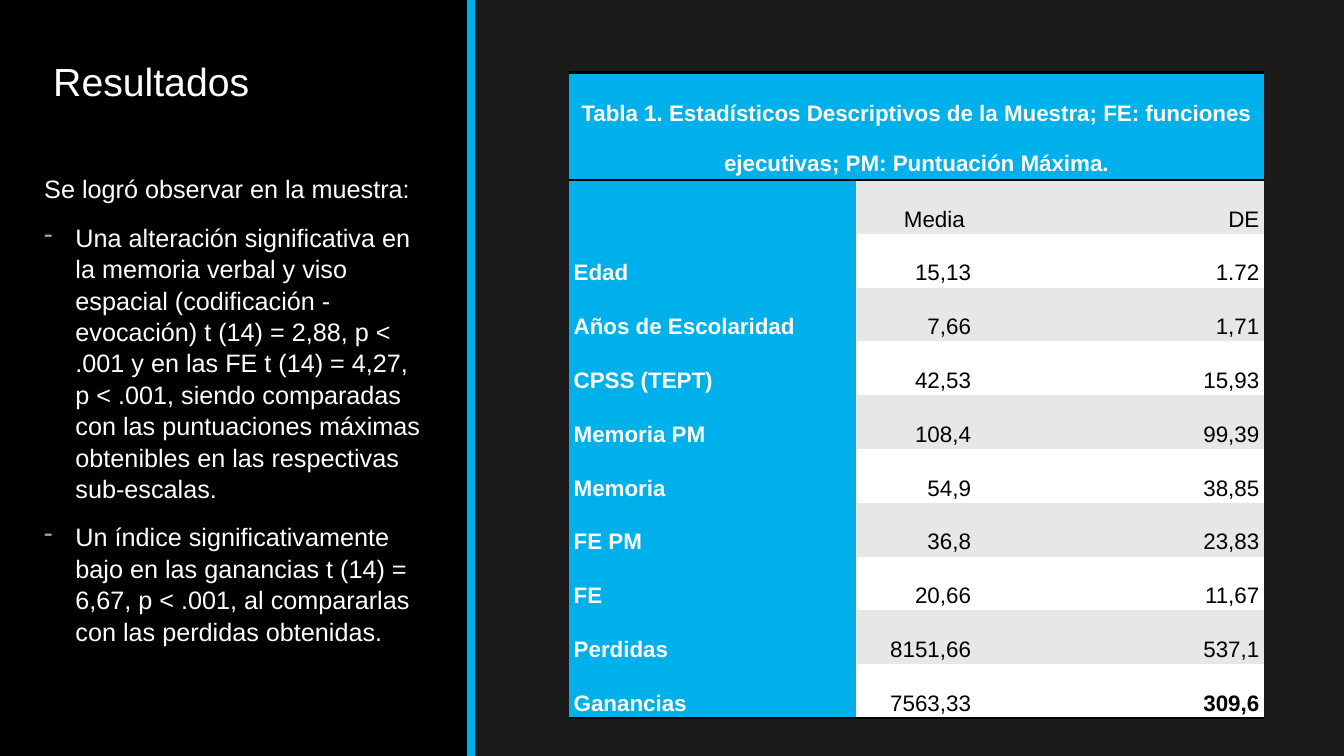
from dataclasses import dataclass

from lxml import etree
from pptx import Presentation
from pptx.dml.color import RGBColor
from pptx.enum.shapes import MSO_CONNECTOR, MSO_SHAPE
from pptx.enum.text import MSO_ANCHOR, PP_ALIGN
from pptx.oxml.ns import qn
from pptx.util import Inches, Pt

RECTANGLE = MSO_SHAPE.RECTANGLE
STRAIGHT = MSO_CONNECTOR.STRAIGHT
TOP, MIDDLE, BOTTOM = MSO_ANCHOR.TOP, MSO_ANCHOR.MIDDLE, MSO_ANCHOR.BOTTOM
LEFT, CENTER, RIGHT = PP_ALIGN.LEFT, PP_ALIGN.CENTER, PP_ALIGN.RIGHT
PLAIN_TABLE_STYLE = "{2D5ABB26-0587-4C30-8999-92F81FD0307C}"


@dataclass(frozen=True)
class Theme:
    font: str = "Arial"
    background: str = "1B1B1B"
    black: str = "000000"
    white: str = "FFFFFF"
    accent: str = "00B0EA"
    band: str = "E7E7E7"
    bullet: str = "A6A6A6"
    title_size: int = 28
    body_size: int = 18
    table_size: int = 16
    divider_width: int = 6
    rule_width: int = 2


THEME = Theme()

INTRO = "Se logró observar en la muestra:"
FINDINGS = [
    "Una alteración significativa en la memoria verbal y viso espacial "
    "(codificación - evocación) t (14) = 2,88, p < .001 y en las FE t (14) = 4,27, "
    "p < .001, siendo comparadas con las puntuaciones máximas obtenibles en las "
    "respectivas sub-escalas.",
    "Un índice significativamente bajo en las ganancias t (14) = 6,67, p < .001, "
    "al compararlas con las perdidas obtenidas.",
]
CAPTION = (
    "Tabla 1. Estadísticos Descriptivos de la Muestra; FE: funciones ejecutivas; "
    "PM: Puntuación Máxima."
)
STATISTICS = [
    ("", "Media ", "DE"),
    ("Edad", "15,13", "1.72"),
    ("Años de Escolaridad", "7,66", "1,71"),
    ("CPSS (TEPT)", "42,53", "15,93"),
    ("Memoria PM", "108,4", "99,39"),
    ("Memoria", "54,9", "38,85"),
    ("FE PM", "36,8", "23,83"),
    ("FE", "20,66", "11,67"),
    ("Perdidas", "8151,66", "537,1"),
    ("Ganancias", "7563,33", "309,6"),
]
COLUMN_WIDTHS = [2.85, 1.19, 2.86]
CAPTION_HEIGHT = 0.79
ROW_HEIGHT = 0.49


def color(value):
    return RGBColor.from_string(value)


def style_font(paragraph, size, value, bold=False):
    font = paragraph.font
    font.name = THEME.font
    font.size = Pt(size)
    font.bold = bold
    font.color.rgb = color(value)


def add_text_frame(slide, left, top, width, height, anchor):
    box = slide.shapes.add_textbox(Inches(left), Inches(top), Inches(width), Inches(height))
    frame = box.text_frame
    frame.word_wrap = True
    frame.vertical_anchor = anchor
    return frame


def add_dash(paragraph):
    properties = paragraph._p.get_or_add_pPr()
    indent = Inches(0.31)
    properties.set("marL", str(indent))
    properties.set("indent", str(-indent))
    bullet_color = etree.SubElement(properties, qn("a:buClr"))
    etree.SubElement(bullet_color, qn("a:srgbClr"), val=THEME.bullet)
    etree.SubElement(properties, qn("a:buChar"), char="-")


def add_summary_panel(slide, left, top, width, height):
    panel = slide.shapes.add_shape(
        RECTANGLE, Inches(left), Inches(top), Inches(width), Inches(height)
    )
    panel.shadow.inherit = False
    panel.fill.solid()
    panel.fill.fore_color.rgb = color(THEME.black)
    panel.line.fill.background()

    edge = Inches(left + width)
    divider = slide.shapes.add_connector(STRAIGHT, edge, Inches(top), edge, Inches(top + height))
    divider.line.color.rgb = color(THEME.accent)
    divider.line.width = Pt(THEME.divider_width)
    etree.SubElement(divider.element.spPr, qn("a:effectLst"))

    title = add_text_frame(slide, left + 0.43, top + 0.57, width - 0.84, 1.75, TOP).paragraphs[0]
    title.text = "Resultados"
    title.line_spacing = 0.9
    style_font(title, THEME.title_size, THEME.white)

    body = add_text_frame(slide, left + 0.34, top + 1.79, width - 0.66, 4.67, BOTTOM)
    for index, text in enumerate([INTRO, *FINDINGS]):
        paragraph = body.add_paragraph() if index else body.paragraphs[0]
        paragraph.text = text
        paragraph.space_before = Pt(12)
        paragraph.line_spacing = 1.04
        if index:
            add_dash(paragraph)
        style_font(paragraph, THEME.body_size, THEME.white)


def fill_cell(cell, text, fill, value, alignment, bold=False):
    cell.fill.solid()
    cell.fill.fore_color.rgb = color(fill)
    cell.vertical_anchor = MIDDLE
    cell.margin_left = cell.margin_right = Inches(0.05)
    cell.margin_top = cell.margin_bottom = 0
    paragraph = cell.text_frame.paragraphs[0]
    paragraph.text = text
    paragraph.alignment = alignment
    if text:
        paragraph.line_spacing = 2.0
        paragraph.space_before = Pt(12)
    style_font(paragraph, THEME.table_size, value, bold)


def rule_cell(cell, *sides):
    properties = cell._tc.get_or_add_tcPr()
    for position, side in enumerate(sides):
        line = etree.Element(qn(f"a:{side}"), w=str(Pt(THEME.rule_width)))
        fill = etree.SubElement(line, qn("a:solidFill"))
        etree.SubElement(fill, qn("a:srgbClr"), val=THEME.black)
        properties.insert(position, line)


def add_statistics_table(slide, left, top):
    height = CAPTION_HEIGHT + ROW_HEIGHT * len(STATISTICS)
    frame = slide.shapes.add_table(
        len(STATISTICS) + 1, len(COLUMN_WIDTHS),
        Inches(left), Inches(top), Inches(sum(COLUMN_WIDTHS)), Inches(height),
    )
    table = frame.table
    table.first_row = table.horz_banding = False
    frame.element.find(f".//{qn('a:tableStyleId')}").text = PLAIN_TABLE_STYLE
    for column, width in zip(table.columns, COLUMN_WIDTHS):
        column.width = Inches(width)
    for index, row in enumerate(table.rows):
        row.height = Inches(ROW_HEIGHT if index else CAPTION_HEIGHT)

    last_row, last_column = len(STATISTICS), len(COLUMN_WIDTHS) - 1
    table.cell(0, 0).merge(table.cell(0, last_column))
    fill_cell(table.cell(0, 0), CAPTION, THEME.accent, THEME.white, CENTER, True)
    for row_index, (label, *values) in enumerate(STATISTICS, 1):
        fill_cell(table.cell(row_index, 0), label, THEME.accent, THEME.white, LEFT, True)
        band = THEME.band if row_index % 2 else THEME.white
        for column_index, value in enumerate(values, 1):
            bold = (row_index, column_index) == (last_row, last_column)
            fill_cell(table.cell(row_index, column_index), value, band, THEME.black, RIGHT, bold)
    for column_index in range(len(COLUMN_WIDTHS)):
        rule_cell(table.cell(0, column_index), "lnT", "lnB")
        rule_cell(table.cell(last_row, column_index), "lnB")


def main():
    presentation = Presentation()
    presentation.slide_width = Inches(13.33)
    presentation.slide_height = Inches(7.5)
    slide = presentation.slides.add_slide(presentation.slide_layouts[6])
    slide.background.fill.solid()
    slide.background.fill.fore_color.rgb = color(THEME.background)
    add_summary_panel(slide, 0, 0, 4.67, 7.5)
    add_statistics_table(slide, 5.64, 0.72)
    presentation.save("out.pptx")


if __name__ == "__main__":
    main()
